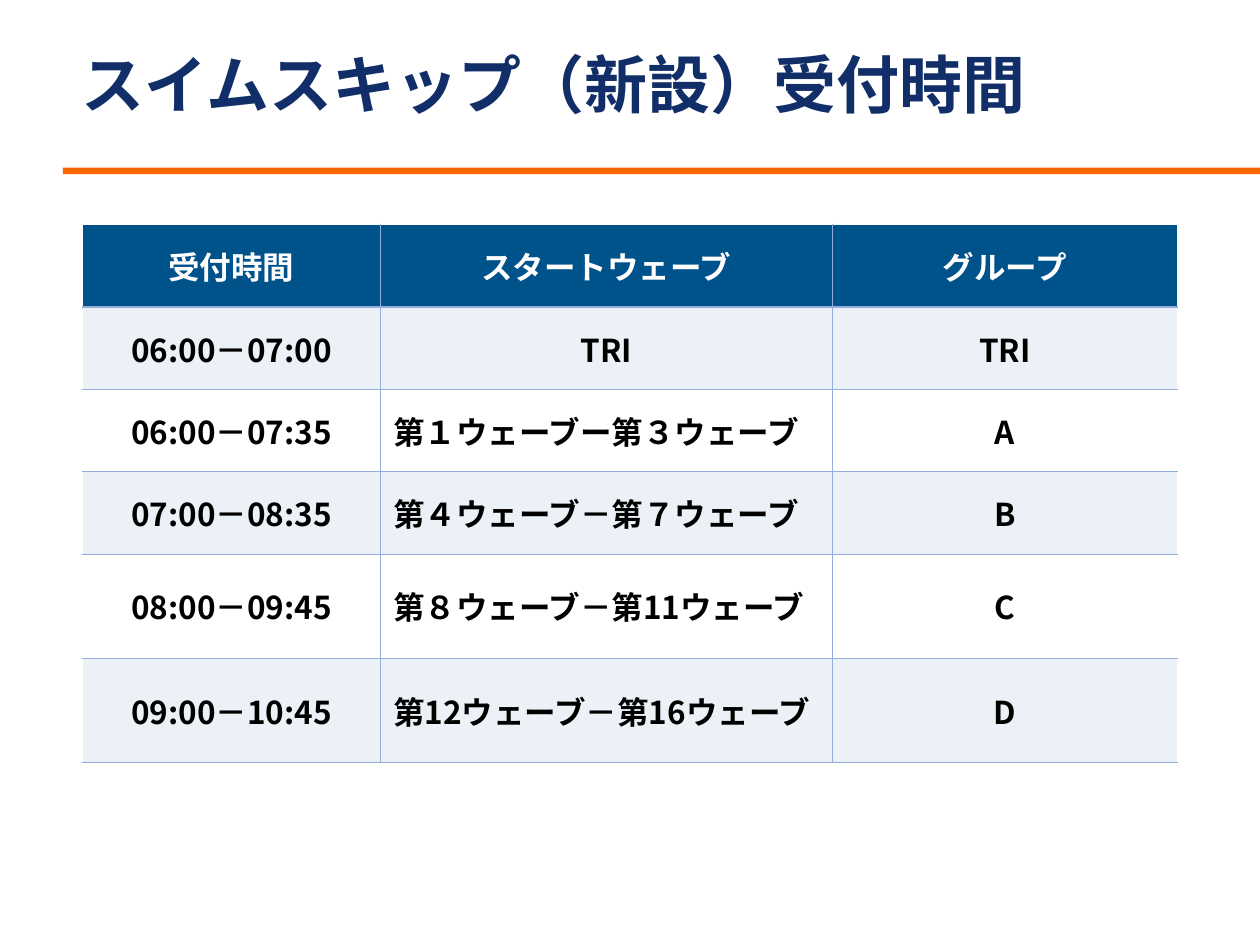
from dataclasses import dataclass

from lxml import etree
from pptx import Presentation
from pptx.dml.color import RGBColor
from pptx.enum import shapes, text
from pptx.oxml.ns import qn
from pptx.util import Cm, Pt


@dataclass(frozen=True)
class Theme:
    navy: str = "112E68"
    orange: str = "FF6600"
    head: str = "00528B"
    band: str = "ECF1F8"
    line: str = "92AEDC"
    white: str = "FFFFFF"
    black: str = "000000"
    latin: str = "Arial"
    asian: str = "Noto Sans CJK JP"
    title: int = 36
    body: int = 18


class Deck:
    def __init__(self, theme):
        self.theme = theme
        self.prs = Presentation()
        self.prs.slide_width, self.prs.slide_height = Cm(25.4), Cm(19.05)
        self.slide = self.prs.slides.add_slide(self.prs.slide_layouts[6])

    def style(self, para, size, color, face):
        font = para.font
        font.size, font.bold, font.name = Pt(size), True, face
        font.color.rgb = RGBColor.from_string(color)
        props = para._p.pPr.find(qn("a:defRPr"))
        etree.SubElement(props, qn("a:ea"), typeface=self.theme.asian)

    def title(self, words, x, y, w, h):
        frame = self.slide.shapes.add_textbox(Cm(x), Cm(y), Cm(w), Cm(h)).text_frame
        frame.word_wrap = True
        frame.margin_left = frame.margin_top = 0
        para = frame.paragraphs[0]
        para.text = words
        self.style(para, self.theme.title, self.theme.navy, self.theme.latin)
        para.line_spacing = 0.9
        frame.margin_top = Cm(0.18)

    def bar(self, x, y, w, h):
        bar = self.slide.shapes.add_shape(
            shapes.MSO_SHAPE.RECTANGLE, Cm(x), Cm(y), Cm(w), Cm(h))
        bar.shadow.inherit = False
        bar.fill.solid()
        bar.fill.fore_color.rgb = RGBColor.from_string(self.theme.orange)
        bar.line.fill.background()

    def edge(self, side, outer):
        # Outer edges are white, all others blue
        color, width = (self.theme.white, 1) if outer else (self.theme.line, 0.75)
        line = etree.Element(qn(f"a:ln{side}"), w=str(Pt(width)))
        fill = etree.SubElement(line, qn("a:solidFill"))
        etree.SubElement(fill, qn("a:srgbClr"), val=color)
        return line

    def cell(self, cell, words, fill, color, center):
        cell.vertical_anchor = text.MSO_ANCHOR.MIDDLE
        para = cell.text_frame.paragraphs[0]
        para.text = words
        para.alignment = text.PP_ALIGN.CENTER if center else text.PP_ALIGN.LEFT
        self.style(para, self.theme.body, color, self.theme.asian)
        if fill:
            cell.fill.solid()
            cell.fill.fore_color.rgb = RGBColor.from_string(fill)
        else:
            cell.fill.background()

    def table(self, rows, x, y, widths, heights):
        table = self.slide.shapes.add_table(
            len(rows), len(widths), Cm(x), Cm(y),
            Cm(sum(widths)), Cm(sum(heights))).table
        table.horz_banding = False
        for col, width in zip(table.columns, widths):
            col.width = Cm(width)
        for r, row in enumerate(rows):
            table.rows[r].height = Cm(heights[r])
            for c, words in enumerate(row):
                cell = table.cell(r, c)
                if r == 0:
                    fill, color = self.theme.head, self.theme.white
                else:
                    fill, color = self.theme.band if r % 2 else None, self.theme.black
                self.cell(cell, words, fill, color, c != 1 or r < 2)
                outer = {"L": c == 0, "R": c == len(widths) - 1, "T": r == 0, "B": False}
                props = cell._tc.get_or_add_tcPr()
                for i, (side, out) in enumerate(outer.items()):
                    props.insert(i, self.edge(side, out))


def main():
    deck = Deck(Theme())

    # Heading and rule
    deck.bar(1.27, 3.38, 24.13, 0.13)
    deck.title("スイムスキップ（新設）受付時間", 1.65, 0.91, 22.1, 2)

    # Check-in times; the last two rows hold two lines
    rows = [
        ("受付時間", "スタートウェーブ", "グループ"),
        ("06:00－07:00", "TRI", "TRI"),
        ("06:00－07:35", "第１ウェーブー第３ウェーブ", "A"),
        ("07:00－08:35", "第４ウェーブ－第７ウェーブ", "B"),
        ("08:00－09:45", "第８ウェーブ－第11ウェーブ", "C"),
        ("09:00－10:45", "第12ウェーブ－第16ウェーブ", "D"),
    ]
    deck.table(rows, 1.66, 4.53, (6.01, 9.11, 6.96), [1.66] * 4 + [2.1] * 2)

    deck.prs.save("out.pptx")


if __name__ == "__main__":
    main()
